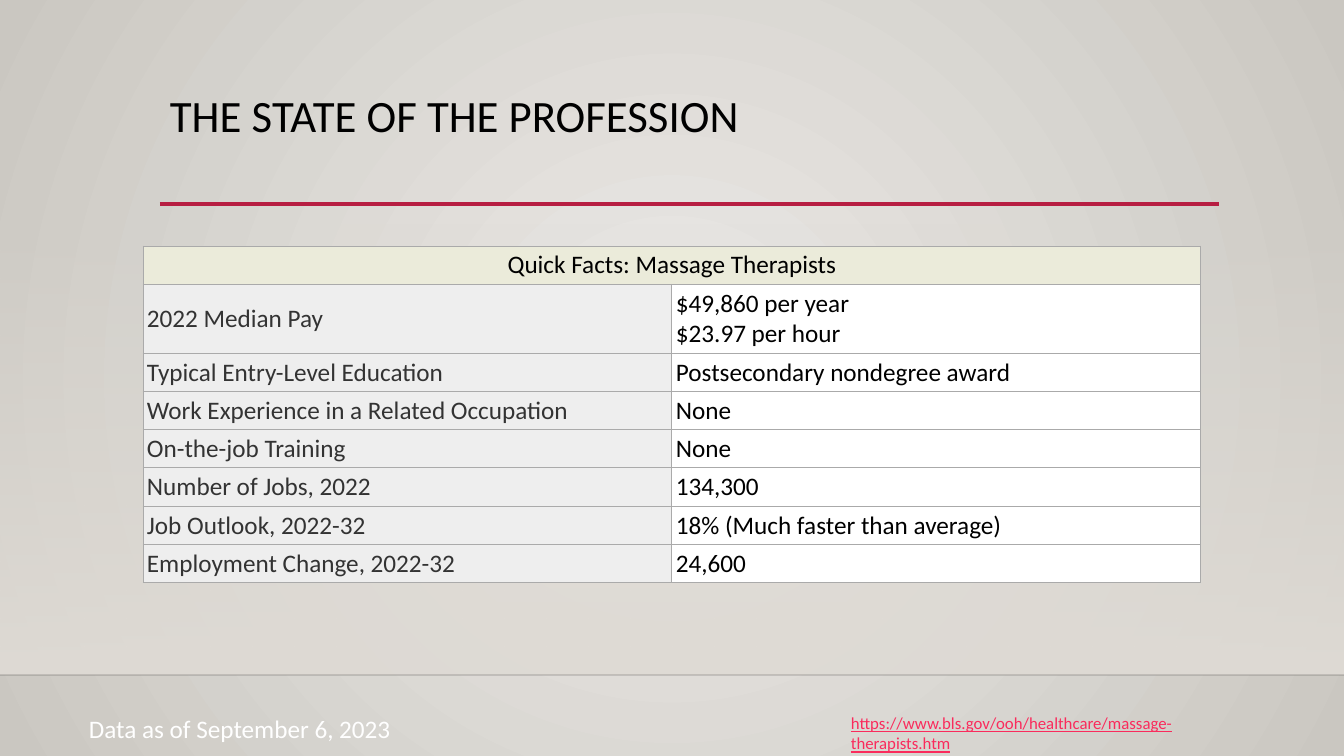
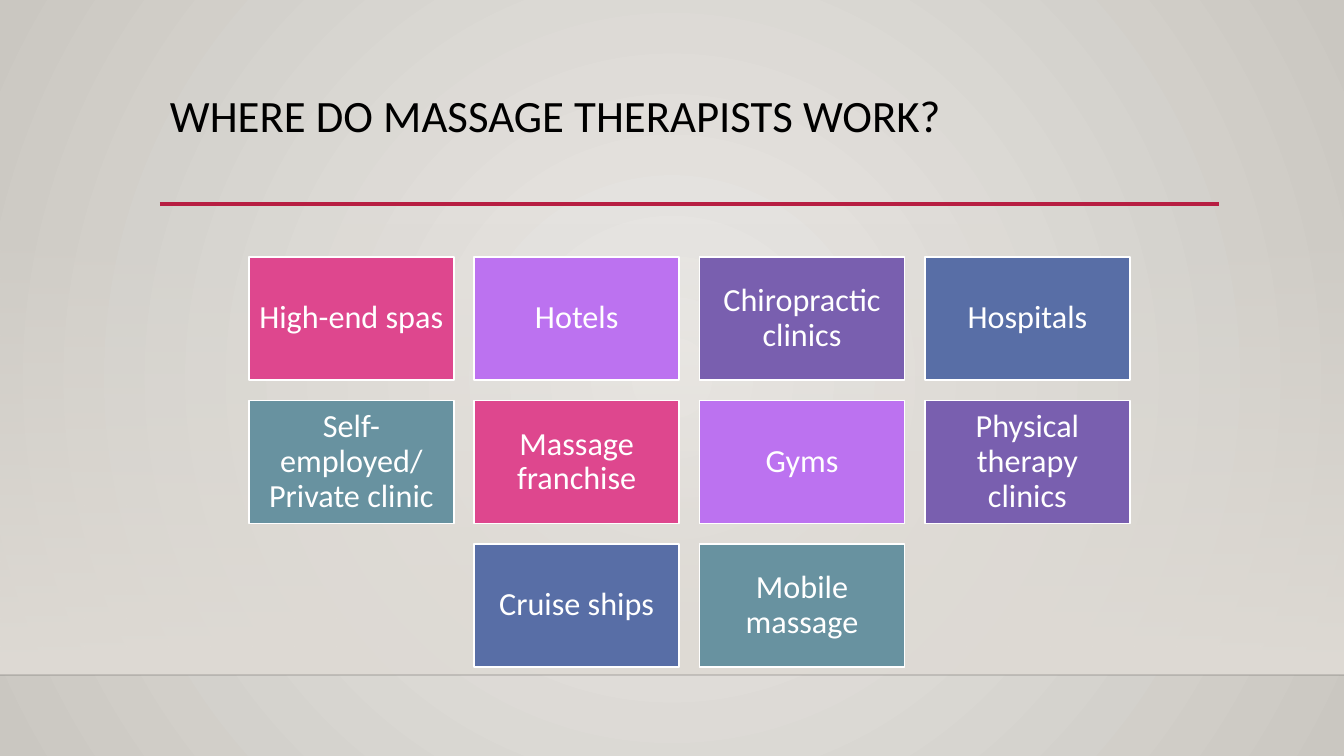
"""Build two slides on the massage therapy profession."""
from lxml import etree
from pptx import Presentation
from pptx.dml.color import RGBColor
from pptx.enum.shapes import MSO_CONNECTOR, MSO_SHAPE
from pptx.enum.text import MSO_ANCHOR, PP_ALIGN
from pptx.oxml.ns import qn
from pptx.util import Emu, Pt

SLIDE_WIDTH, SLIDE_HEIGHT = 1344, 756
EMU_PER_PX = 12192000 / SLIDE_WIDTH
FONT = "Calibri"
RECTANGLE, STRAIGHT = MSO_SHAPE.RECTANGLE, MSO_CONNECTOR.STRAIGHT
TOP, MIDDLE, BOTTOM = MSO_ANCHOR.TOP, MSO_ANCHOR.MIDDLE, MSO_ANCHOR.BOTTOM
LEFT, CENTER = PP_ALIGN.LEFT, PP_ALIGN.CENTER

BLACK = RGBColor(0x00, 0x00, 0x00)
WHITE = RGBColor(0xFF, 0xFF, 0xFF)
GLOW_CENTER = RGBColor(0xEC, 0xEA, 0xE7)
GLOW_EDGE = RGBColor(0xCA, 0xC7, 0xC1)
BAND = RGBColor(0xDF, 0xDB, 0xD5)
FLOOR_LINE = RGBColor(0x00, 0x00, 0x01)
TITLE_LINE = RGBColor(0xB7, 0x1E, 0x42)
LINK = RGBColor(0xFA, 0x2B, 0x5C)
TABLE_HEADER = RGBColor(0xEB, 0xEB, 0xDA)
TABLE_LABEL = RGBColor(0xEE, 0xEE, 0xEE)
TABLE_BORDER = RGBColor(0xAA, 0xAA, 0xAA)
LABEL_TEXT = RGBColor(0x33, 0x33, 0x33)
TILE_COLORS = (
    RGBColor(0xDE, 0x47, 0x8E),
    RGBColor(0xBC, 0x72, 0xF0),
    RGBColor(0x79, 0x5F, 0xAF),
    RGBColor(0x58, 0x6E, 0xA6),
    RGBColor(0x68, 0x92, 0xA0),
)

TITLE_BOX = (160, 89, 1059, 116)
TABLE_BOX = (143, 246, 1058, 339)
DATE_BOX = (79, 708, 532, 40)
SOURCE_BOX = (841, 708, 426, 30)
TILES_BOX = (249, 257, 881, 410)
TILE_WIDTH, TILE_HEIGHT, TILE_COLUMNS = 205, 123, 4
BAND_TOP, FLOOR = 223, 675

FACTS_HEADING = "Quick Facts: Massage Therapists"
FACTS = (
    ("2022 Median Pay", "$49,860 per year\v$23.97 per hour"),
    ("Typical Entry-Level Education", "Postsecondary nondegree award"),
    ("Work Experience in a Related Occupation", "None"),
    ("On-the-job Training", "None"),
    ("Number of Jobs, 2022", "134,300"),
    ("Job Outlook, 2022-32", "18% (Much faster than average)"),
    ("Employment Change, 2022-32", "24,600"),
)
WORKPLACES = (
    "High-end spas", "Hotels", "Chiropractic clinics", "Hospitals",
    "Self-employed/ Private clinic", "Massage franchise", "Gyms",
    "Physical therapy clinics", "Cruise ships", "Mobile massage",
)


def px(length):
    """Turn pixels into EMU."""
    return Emu(round(length * EMU_PER_PX))


def set_opacity(element, percent):
    """Give the first colour inside an element an opacity."""
    color = next(element.iter(qn("a:srgbClr")))
    etree.SubElement(color, qn("a:alpha")).set("val", str(percent * 1000))


def format_text(text_frame, size, color, align=LEFT, spacing=1.0, underline=False):
    """Format every paragraph and run of a text frame."""
    for paragraph in text_frame.paragraphs:
        paragraph.alignment = align
        paragraph.line_spacing = spacing
        for run in paragraph.runs:
            run.font.name = FONT
            run.font.size = Pt(size)
            run.font.color.rgb = color
            run.font.underline = underline


def add_text(slide, box, text, size, color, **style):
    """Add a wrapped text box."""
    text_frame = slide.shapes.add_textbox(*map(px, box)).text_frame
    text_frame.word_wrap = True
    text_frame.vertical_anchor = TOP
    text_frame.text = text
    format_text(text_frame, size, color, **style)


def add_rule(slide, left, right, y, color, width):
    """Add a horizontal line without shadow."""
    rule = slide.shapes.add_connector(STRAIGHT, px(left), px(y), px(right), px(y))
    rule.line.color.rgb = color
    rule.line.width = Pt(width)
    etree.SubElement(rule.element.spPr, qn("a:effectLst"))
    return rule


def set_gradient(fill, start, end):
    """Fill with a two-colour gradient."""
    fill.gradient()
    for stop, color in zip(fill.gradient_stops, (start, end)):
        stop.color.rgb = color


def add_background(slide):
    """Paint the round glow behind the slide."""
    set_gradient(slide.background.fill, GLOW_CENTER, GLOW_EDGE)
    linear = next(slide.element.iter(qn("a:lin")))
    circle = etree.Element(qn("a:path"))
    circle.set("path", "circle")
    focus = etree.SubElement(circle, qn("a:fillToRect"))
    for side in "ltrb":
        focus.set(side, "50000")
    linear.getparent().replace(linear, circle)


def add_band(slide):
    """Add the fading band and the floor line below it."""
    band = slide.shapes.add_shape(
        RECTANGLE, 0, px(BAND_TOP), px(SLIDE_WIDTH), px(FLOOR - BAND_TOP))
    band.shadow.inherit = False
    band.line.fill.background()
    set_gradient(band.fill, BAND, BAND)
    band.fill.gradient_angle = 270
    set_opacity(band.element.spPr, 0)
    floor = add_rule(slide, 0, SLIDE_WIDTH, FLOOR, FLOOR_LINE, 1)
    set_opacity(floor.element.spPr, 20)


def add_base_slide(presentation, title):
    """Add a slide with the shared background, band and title."""
    slide = presentation.slides.add_slide(presentation.slide_layouts[6])
    add_background(slide)
    add_band(slide)
    left, top, width, height = TITLE_BOX
    add_rule(slide, left, left + width, top + height - 1, TITLE_LINE, 2.5)
    add_text(slide, TITLE_BOX, title, 32, BLACK, spacing=0.9)
    return slide


def add_borders(cell):
    """Draw the four borders of a cell."""
    properties = cell._tc.get_or_add_tcPr()
    for index, side in enumerate("LRTB"):
        border = etree.Element(qn(f"a:ln{side}"))
        border.set("w", str(Pt(0.75)))
        fill = etree.SubElement(border, qn("a:solidFill"))
        etree.SubElement(fill, qn("a:srgbClr")).set("val", str(TABLE_BORDER))
        properties.insert(index, border)


def fill_cell(cell, text, fill, color, align=LEFT, anchor=MIDDLE):
    """Write and format one table cell."""
    cell.text = text
    cell.vertical_anchor = anchor
    cell.margin_left = cell.margin_right = px(4)
    cell.margin_top = cell.margin_bottom = px(4)
    cell.fill.solid()
    cell.fill.fore_color.rgb = fill
    add_borders(cell)
    format_text(cell.text_frame, 18, color, align)


def add_facts_table(slide, box):
    """Add the table of facts under its merged heading."""
    table_frame = slide.shapes.add_table(len(FACTS) + 1, 2, *map(px, box))
    table = table_frame.table
    for column in table.columns:
        column.width = px(box[2] // 2)
    for row in table.rows:
        row.height = px(38)
    table.rows[1].height = px(69)
    heading, neighbor = table.rows[0].cells
    heading.merge(neighbor)
    fill_cell(heading, FACTS_HEADING, TABLE_HEADER, BLACK, CENTER, BOTTOM)
    add_borders(neighbor)
    for index, (label, value) in enumerate(FACTS, start=1):
        fill_cell(table.cell(index, 0), label, TABLE_LABEL, LABEL_TEXT)
        fill_cell(table.cell(index, 1), value, WHITE, BLACK)


def add_tile(slide, left, top, text, color):
    """Add one coloured tile."""
    tile = slide.shapes.add_shape(
        RECTANGLE, px(left), px(top), px(TILE_WIDTH), px(TILE_HEIGHT))
    tile.shadow.inherit = False
    tile.fill.solid()
    tile.fill.fore_color.rgb = color
    tile.line.color.rgb = WHITE
    tile.line.width = Pt(1.25)
    text_frame = tile.text_frame
    text_frame.word_wrap = True
    text_frame.vertical_anchor = MIDDLE
    text_frame.margin_left = text_frame.margin_right = px(9)
    text_frame.margin_top = text_frame.margin_bottom = px(9)
    text_frame.text = text
    format_text(text_frame, 23, WHITE, CENTER, 0.9)


def add_tiles(slide, box):
    """Lay the workplaces out in rows, each row centred in the box."""
    left, top, width, height = box
    rows = [WORKPLACES[start:start + TILE_COLUMNS]
            for start in range(0, len(WORKPLACES), TILE_COLUMNS)]
    pitch_x = (width - TILE_WIDTH) / (TILE_COLUMNS - 1)
    pitch_y = (height - TILE_HEIGHT) / (len(rows) - 1)
    for row_index, row in enumerate(rows):
        row_left = left + (TILE_COLUMNS - len(row)) * pitch_x / 2
        for column_index, text in enumerate(row):
            number = row_index * TILE_COLUMNS + column_index
            add_tile(slide, row_left + column_index * pitch_x,
                     top + row_index * pitch_y, text,
                     TILE_COLORS[number % len(TILE_COLORS)])


def build_profession_slide(presentation):
    """Build the slide with the facts table."""
    slide = add_base_slide(presentation, "THE STATE OF THE PROFESSION")
    add_facts_table(slide, TABLE_BOX)
    add_text(slide, DATE_BOX, "Data as of September 6, 2023", 18, WHITE)
    add_text(slide, SOURCE_BOX,
             "https://www.bls.gov/ooh/healthcare/massage-therapists.htm",
             12, LINK, underline=True)


def build_workplaces_slide(presentation):
    """Build the slide with the workplace tiles."""
    slide = add_base_slide(presentation, "WHERE DO MASSAGE THERAPISTS WORK?")
    add_tiles(slide, TILES_BOX)


def main():
    """Build and save the presentation."""
    presentation = Presentation()
    presentation.slide_width = px(SLIDE_WIDTH)
    presentation.slide_height = px(SLIDE_HEIGHT)
    build_profession_slide(presentation)
    build_workplaces_slide(presentation)
    presentation.save("out.pptx")


if __name__ == "__main__":
    main()
